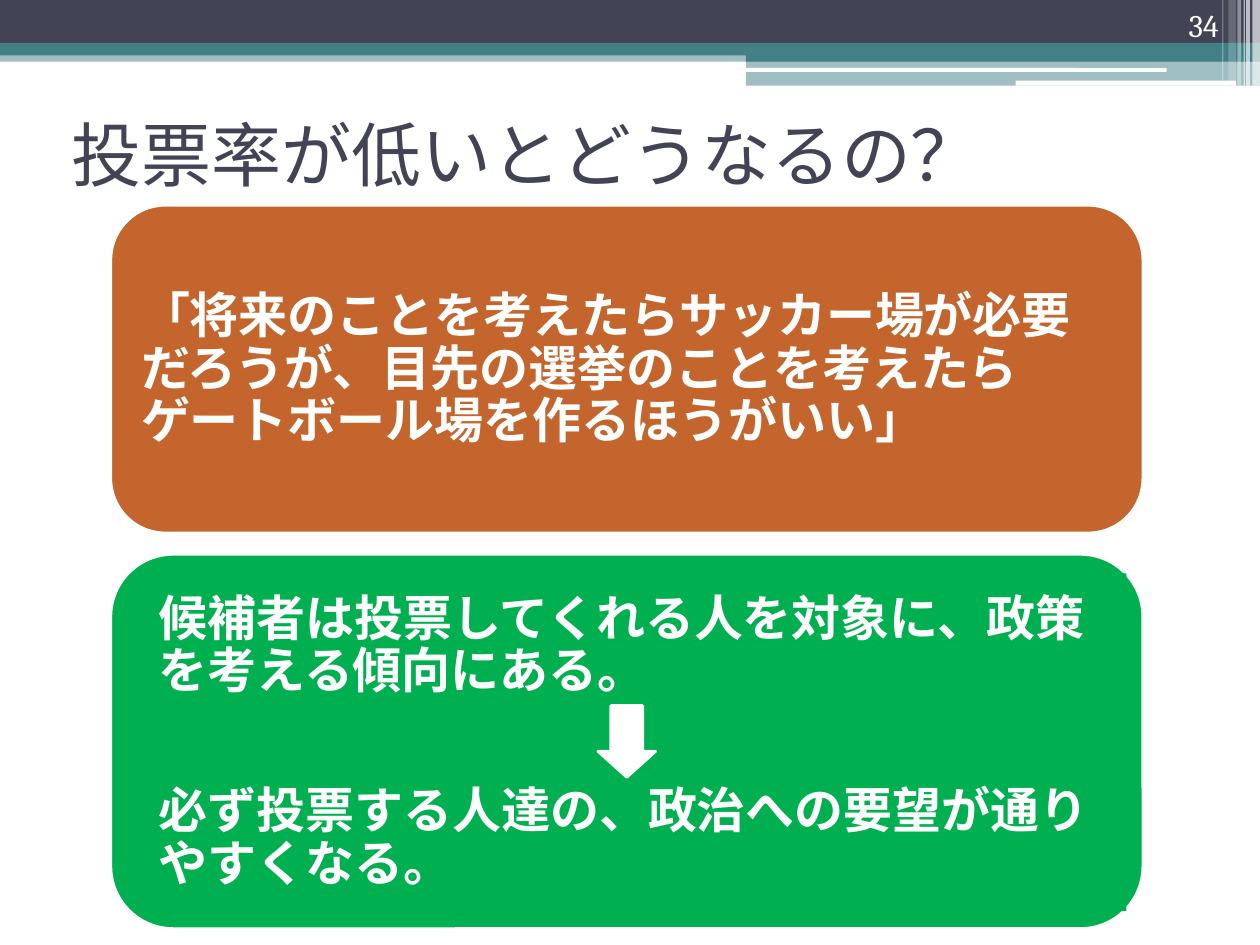
from lxml import etree
from pptx import Presentation
from pptx.dml.color import RGBColor
from pptx.enum.shapes import MSO_SHAPE
from pptx.enum.text import MSO_ANCHOR, MSO_AUTO_SIZE, PP_ALIGN
from pptx.oxml.ns import qn
from pptx.util import Inches, Pt

RECT, ROUND = MSO_SHAPE.RECTANGLE, MSO_SHAPE.ROUNDED_RECTANGLE
DOWN = MSO_SHAPE.DOWN_ARROW
MIDDLE, BOTTOM = MSO_ANCHOR.MIDDLE, MSO_ANCHOR.BOTTOM
LEFT, RIGHT = PP_ALIGN.LEFT, PP_ALIGN.RIGHT
NO_FIT = MSO_AUTO_SIZE.NONE

WHITE = RGBColor(0xFF, 0xFF, 0xFF)
NAVY = RGBColor(0x42, 0x44, 0x56)
TEAL = RGBColor(0x43, 0x80, 0x86)
GREEN = RGBColor(0x00, 0xB0, 0x50)
RUST = RGBColor(0xC4, 0x65, 0x2D)
GOTHIC, SERIF = "Noto Sans CJK JP", "Cambria"


def add_block(slide, kind, box, color, alpha=100, line=0):
    """Add a filled shape; alpha is opacity in percent, line a white outline in points."""
    shape = slide.shapes.add_shape(kind, *map(Inches, box))
    shape.shadow.inherit = False
    shape.fill.solid()
    shape.fill.fore_color.rgb = color
    if alpha < 100:
        tint = shape.fill._xPr.find(".//" + qn("a:srgbClr"))
        etree.SubElement(tint, qn("a:alpha"), val=str(alpha * 1000))
    if line:
        shape.line.color.rgb = WHITE
        shape.line.width = Pt(line)
    else:
        shape.line.fill.background()
    return shape


def set_text(para, text, size, color, font=GOTHIC, bold=False, align=LEFT):
    para.alignment = align
    run = para.add_run()
    run.text = text
    run.font.size = Pt(size)
    run.font.bold = bold
    run.font.name = font
    run.font.color.rgb = color
    etree.SubElement(run.font._element, qn("a:ea"), typeface=font)


def add_bands(slide, left, top, width):
    """Draw the header bands, with white stripes at the right end."""
    step = left + 5.92
    right = left + width
    for x, y, high, color, alpha in (
        (left, 0.4, 0.09, TEAL, 50),
        (left, 0, 0.34, NAVY, 100),
        (left, 0.34, 0.1, TEAL, 100),
        (step, 0.39, 0.1, TEAL, 100),
        (step, 0.48, 0.2, TEAL, 50),
    ):
        add_block(slide, RECT, (x, top + y, right - x, high), color, alpha)
    for x, y, wide, high in ((5.91, 0.54, 3.35, 0.03), (8.06, 0.64, 1.75, 0.04)):
        add_block(slide, ROUND, (left + x, top + y, wide, high), WHITE)
    for gap, wide, high, alpha in (
        (0.06, 0.06, 0.68, 65),
        (0.11, 0.03, 0.68, 65),
        (0.13, 0.01, 0.68, 60),
        (0.18, 0.03, 0.68, 40),
        (0.25, 0.06, 0.64, 20),
        (0.3, 0.01, 0.64, 30),
    ):
        add_block(slide, RECT, (right - gap, top, wide, high), WHITE, alpha)


def add_title(slide, box, text):
    title = slide.shapes.title
    title.left, title.top, title.width, title.height = map(Inches, box)
    frame = title.text_frame
    frame.auto_size = NO_FIT
    frame.vertical_anchor = MIDDLE
    set_text(frame.paragraphs[0], text, 40, NAVY)


def add_number(slide, box, text):
    frame = slide.shapes.add_textbox(*map(Inches, box)).text_frame
    frame.word_wrap = True
    frame.vertical_anchor = BOTTOM
    set_text(frame.paragraphs[0], text, 18, WHITE, SERIF, align=RIGHT)


def fill_panel(shape, lines, gap=0):
    """Write bold white paragraphs, gap points apart."""
    frame = shape.text_frame
    frame.word_wrap = True
    frame.vertical_anchor = MIDDLE
    frame.margin_left = frame.margin_right = Inches(0.12)
    frame.margin_top = frame.margin_bottom = Inches(0.06)
    for i, text in enumerate(lines):
        para = frame.add_paragraph() if i else frame.paragraphs[0]
        para.line_spacing = Pt(30)
        para.space_before = Pt(gap if i else 0)
        set_text(para, text, 28, WHITE, bold=True)


def add_quote(slide, left, top, width, height):
    add_block(slide, ROUND, (left, top, width, height), RUST, line=1.5)
    inner = (left + 0.12, top + 0.13, width - 0.25, height - 0.25)
    text = slide.shapes.add_textbox(*map(Inches, inner))
    fill_panel(text, ["「将来のことを考えたらサッカー場が必要だろうが、"
                      "目先の選挙のことを考えたらゲートボール場を作るほうがいい」"])


def add_result(slide, left, top, width, height):
    """Draw the green panel: cause, down arrow, effect."""
    add_block(slide, ROUND, (left, top, width, height), GREEN, line=1.5)
    inner = (left + 0.26, top + 0.15, width - 0.39, height - 0.29)
    fill_panel(add_block(slide, RECT, inner, GREEN), [
        "候補者は投票してくれる人を対象に、政策を考える傾向にある。",
        "必ず投票する人達の、政治への要望が通りやすくなる。",
    ], gap=50)
    mid = left + width / 2
    arrow = add_block(slide, DOWN, (mid - 0.23, top + 1.2, 0.46, 0.57), WHITE, line=1.5)
    arrow.adjustments[0] = 0.55
    arrow.adjustments[1] = 0.45


def main():
    deck = Presentation()
    deck.slide_width, deck.slide_height = Inches(10), Inches(7.5)
    slide = deck.slides.add_slide(deck.slide_layouts[5])
    add_bands(slide, 0, 0, 10)
    add_title(slide, (0.47, 0.63, 9, 1.17), "投票率が低いとどうなるの？")
    add_number(slide, (8.94, 0, 0.83, 0.4), "34")
    add_result(slide, 0.88, 4.4, 8.19, 2.97)
    add_quote(slide, 0.88, 1.63, 8.19, 2.6)
    deck.save("out.pptx")


if __name__ == "__main__":
    main()
